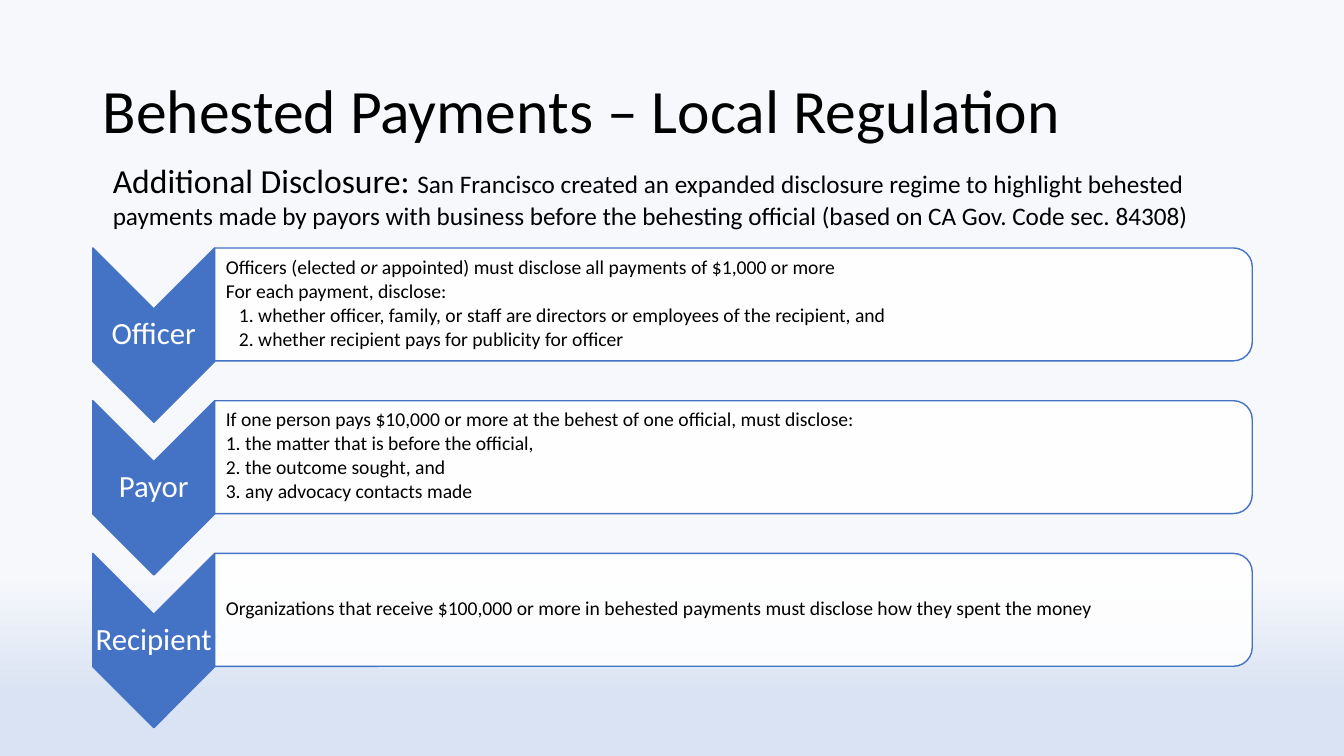
from lxml import etree
from pptx import Presentation
from pptx.dml.color import RGBColor
from pptx.enum import shapes, text
from pptx.oxml import ns
from pptx.util import Inches, Pt

BLACK = RGBColor(0x00, 0x00, 0x00)
WHITE = RGBColor(0xFF, 0xFF, 0xFF)
BLUE = RGBColor(0x44, 0x72, 0xC4)
PALE = RGBColor(0xF6, 0xF8, 0xFC)
MIST = RGBColor(0xDA, 0xE3, 0xF3)

FONT = "Calibri"
STEP_TOP = 2.46
STEP_PITCH = 1.515
STEP_LEFT = 0.92
CHEVRON_WIDTH = 1.21
CHEVRON_HEIGHT = 1.73
PANEL_WIDTH = 10.29
PANEL_HEIGHT = 1.12

STEPS = [
    ("Officer", [
        {"runs": [("Officers (elected ", {}), ("or ", {"italic": True}),
                  ("appointed) must disclose all payments of $1,000 or more", {})]},
        {"runs": [("For each payment, disclose:", {})]},
        {"runs": [(" whether officer, family, or staff are directors or employees"
                   " of the recipient, and", {})], "indent": 0.25, "numbered": True},
        {"runs": [(" whether recipient pays for publicity for officer", {})],
         "indent": 0.25, "numbered": True},
    ]),
    ("Payor", [
        {"runs": [("If one person pays $10,000 or more at the behest of one official,"
                   " must disclose:", {})]},
        {"runs": [(" the matter that is before the official,", {})], "numbered": True},
        {"runs": [(" the outcome sought, and", {})], "numbered": True},
        {"runs": [(" any advocacy contacts made", {})], "numbered": True},
    ]),
    ("Recipient", [
        {"runs": [("Organizations that receive $100,000 or more in behested payments"
                   " must disclose how they spent the money", {})]},
    ]),
]


def plain(words):
    return [{"runs": [(words, {})]}]


def set_indent(paragraph, indent, numbered):
    properties = paragraph._p.get_or_add_pPr()
    properties.set("marL", str(Inches(indent)))
    properties.set("indent", str(-Inches(0.12)))
    if numbered:
        bullet = etree.SubElement(properties, ns.qn("a:buAutoNum"))
        bullet.set("type", "arabicPeriod")


def add_text(slide, paragraphs, left, top, width, height, size=18, color=BLACK,
             align=text.PP_ALIGN.LEFT, anchor=text.MSO_ANCHOR.MIDDLE,
             margins=(0.1, 0.05, 0.1, 0.05), spacing=0.9, after=0, listed=False):
    box = slide.shapes.add_textbox(Inches(left), Inches(top), Inches(width), Inches(height))
    frame = box.text_frame
    frame.word_wrap = True
    frame.vertical_anchor = anchor
    (frame.margin_left, frame.margin_top,
     frame.margin_right, frame.margin_bottom) = map(Inches, margins)
    for index, content in enumerate(paragraphs):
        paragraph = frame.add_paragraph() if index else frame.paragraphs[0]
        paragraph.alignment = align
        paragraph.line_spacing = spacing
        paragraph.space_after = Pt(after)
        if listed:
            set_indent(paragraph, content.get("indent", 0.12), content.get("numbered", False))
        for words, style in content["runs"]:
            run = paragraph.add_run()
            run.text = words
            run.font.name = FONT
            run.font.size = Pt(style.get("size", size))
            run.font.italic = style.get("italic", False)
            run.font.color.rgb = color


def add_turned_shape(slide, kind, left, top, width, height, fill, opacity=100):
    """Place a shape turned by 90 degrees so that it covers the given area."""
    shape = slide.shapes.add_shape(
        kind, Inches(left + (width - height) / 2), Inches(top + (height - width) / 2),
        Inches(height), Inches(width))
    shape.rotation = 90
    shape.shadow.inherit = False
    shape.fill.solid()
    shape.fill.fore_color.rgb = fill
    shape.line.color.rgb = BLUE
    shape.line.width = Pt(1)
    if opacity < 100:
        color = shape._element.spPr.find(ns.qn("a:solidFill"))[0]
        etree.SubElement(color, ns.qn("a:alpha")).set("val", str(opacity * 1000))


def add_step(slide, index, label, paragraphs):
    top = STEP_TOP + index * STEP_PITCH
    panel_left = STEP_LEFT + CHEVRON_WIDTH
    add_turned_shape(slide, shapes.MSO_SHAPE.CHEVRON, STEP_LEFT, top,
                     CHEVRON_WIDTH, CHEVRON_HEIGHT, BLUE)
    add_text(slide, plain(label), STEP_LEFT, top + 0.6, CHEVRON_WIDTH, 0.52, size=22,
             color=WHITE, align=text.PP_ALIGN.CENTER, margins=(0.02,) * 4)
    add_turned_shape(slide, shapes.MSO_SHAPE.ROUND_2_SAME_RECTANGLE, panel_left, top,
                     PANEL_WIDTH, PANEL_HEIGHT, WHITE, opacity=90)
    add_text(slide, paragraphs, panel_left, top + 0.05, 10.24, 1.01, size=14,
             margins=(0.11, 0.01, 0.01, 0.01), after=2, listed=True)


def set_background(slide):
    fill = slide.background.fill
    fill.gradient()
    fill.gradient_angle = 270
    for stop, position, color in zip(fill.gradient_stops, (0.76, 0.92), (PALE, MIST)):
        stop.position = position
        stop.color.rgb = color


def main():
    presentation = Presentation()
    presentation.slide_width = Inches(13.33)
    presentation.slide_height = Inches(7.5)
    slide = presentation.slides.add_slide(presentation.slide_layouts[6])
    set_background(slide)
    add_text(slide, plain("Behested Payments – Local Regulation"),
             0.92, 0.4, 11.5, 1.45, size=44)
    for index, (label, paragraphs) in enumerate(STEPS):
        add_step(slide, index, label, paragraphs)
    disclosure = [{"runs": [
        ("Additional Disclosure: ", {"size": 24}),
        ("San Francisco created an expanded disclosure regime to highlight behested"
         " payments made by payors with business before the behesting official"
         " (based on CA Gov. Code sec. 84308)", {}),
    ]}]
    add_text(slide, disclosure, 1.02, 1.54, 11.39, 0.81,
             anchor=text.MSO_ANCHOR.TOP, spacing=1)
    presentation.save("out.pptx")


if __name__ == "__main__":
    main()
